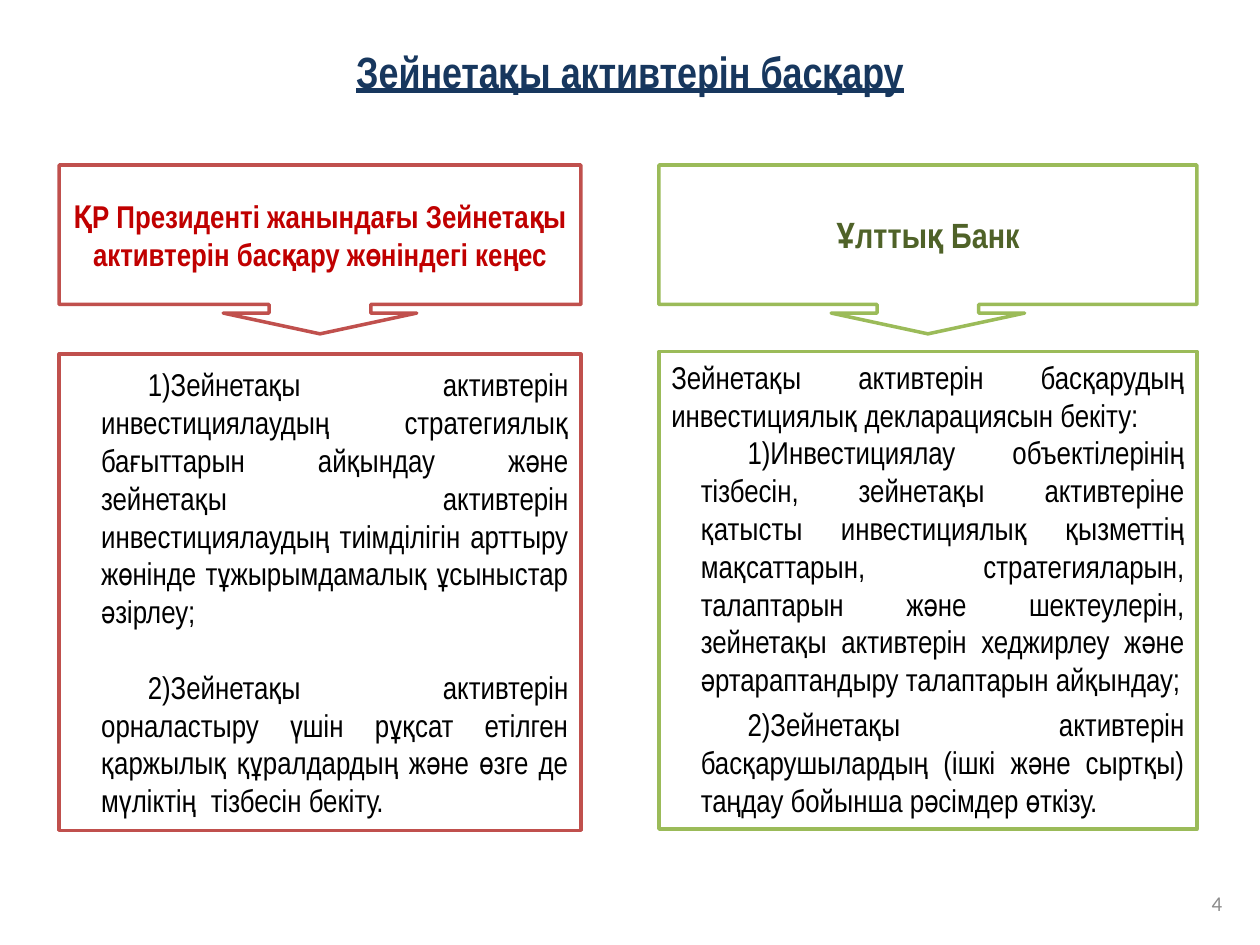
from dataclasses import dataclass

from lxml import etree
from pptx import Presentation
from pptx.dml.color import RGBColor
from pptx.enum.shapes import MSO_SHAPE
from pptx.enum.text import MSO_ANCHOR, MSO_AUTO_SIZE, PP_ALIGN
from pptx.oxml.ns import qn
from pptx.util import Inches, Pt

RECT, CALLOUT = MSO_SHAPE.RECTANGLE, MSO_SHAPE.DOWN_ARROW_CALLOUT
TOP, MIDDLE = MSO_ANCHOR.TOP, MSO_ANCHOR.MIDDLE
CENTER, RIGHT, JUSTIFY = PP_ALIGN.CENTER, PP_ALIGN.RIGHT, PP_ALIGN.JUSTIFY
NO_FIT, GROW = MSO_AUTO_SIZE.NONE, MSO_AUTO_SIZE.SHAPE_TO_FIT_TEXT

NAVY = RGBColor(0x17, 0x37, 0x5E)
RED = RGBColor(0xC0, 0x50, 0x4D)
DARK_RED = RGBColor(0xC0, 0x00, 0x00)
GREEN = RGBColor(0x9B, 0xBB, 0x59)
DARK_GREEN = RGBColor(0x4F, 0x62, 0x28)
GRAY = RGBColor(0x8C, 0x8C, 0x8C)
BLACK = RGBColor(0, 0, 0)
WHITE = RGBColor(0xFF, 0xFF, 0xFF)

FONT = "Arial Narrow"
ARROW = (0.602, 0.573, 0.123, 0.826)


@dataclass
class Item:
    text: str
    numbered: bool = True
    after: float = 0


@dataclass
class Column:
    left: float
    width: float
    line: RGBColor
    head: str
    head_size: int
    head_color: RGBColor
    top: float
    height: float
    anchor: MSO_ANCHOR
    fit: MSO_AUTO_SIZE
    items: list[Item]


COLUMNS = [
    Column(0.47, 4.14, RED,
           "ҚР Президенті жанындағы Зейнетақы активтерін басқару жөніндегі кеңес",
           18, DARK_RED, 2.81, 3.78, MIDDLE, NO_FIT, [
               Item("Зейнетақы активтерін инвестициялаудың стратегиялық бағыттарын "
                    "айқындау және зейнетақы активтерін инвестициялаудың тиімділігін "
                    "арттыру жөнінде тұжырымдамалық ұсыныстар әзірлеу;", after=21.6),
               Item("Зейнетақы активтерін орналастыру үшін рұқсат етілген қаржылық "
                    "құралдардың және өзге де мүліктің  тізбесін бекіту."),
           ]),
    Column(5.23, 4.27, GREEN, "Ұлттық Банк", 20, DARK_GREEN, 2.79, 3.79, TOP, GROW, [
        Item("Зейнетақы активтерін басқарудың инвестициялық декларациясын бекіту:",
             numbered=False),
        Item("Инвестициялау объектілерінің тізбесін, зейнетақы активтеріне қатысты "
             "инвестициялық қызметтің мақсаттарын, стратегияларын, талаптарын және "
             "шектеулерін, зейнетақы активтерін хеджирлеу және әртараптандыру "
             "талаптарын айқындау;", after=4),
        Item("Зейнетақы активтерін басқарушылардың (ішкі және сыртқы) таңдау бойынша "
             "рәсімдер өткізу."),
    ]),
]


def write(para, text: str, size: float, color: RGBColor, align: PP_ALIGN,
          bold: bool = False, name: str = FONT) -> None:
    para.text = text
    para.alignment = align
    font = para.runs[0].font
    font.name, font.size, font.bold = name, Pt(size), bold
    font.color.rgb = color


def number(para) -> None:
    """Number the paragraph 1), 2) with an indented first line."""
    props = para._p.get_or_add_pPr()
    props.set("marL", str(Inches(0.235)))
    props.set("indent", str(Inches(0.37)))
    etree.SubElement(props, qn("a:buFont"), typeface="+mj-lt")
    etree.SubElement(props, qn("a:buAutoNum"), type="arabicParenR")


def add_box(slide, kind: MSO_SHAPE, col: Column, top: float, height: float):
    box = slide.shapes.add_shape(kind, Inches(col.left), Inches(top),
                                 Inches(col.width), Inches(height))
    box.shadow.inherit = False
    box.fill.solid()
    box.fill.fore_color.rgb = WHITE
    box.line.color.rgb = col.line
    box.line.width = Pt(2)
    box.text_frame.word_wrap = True
    return box


def add_column(slide, col: Column) -> None:
    body = add_box(slide, RECT, col, col.top, col.height).text_frame
    body.vertical_anchor = col.anchor
    body.auto_size = col.fit
    for i, item in enumerate(col.items):
        para = body.add_paragraph() if i else body.paragraphs[0]
        write(para, item.text, 18, BLACK, JUSTIFY)
        para.space_after = Pt(item.after)
        if item.numbered:
            number(para)

    head = add_box(slide, CALLOUT, col, 1.31, 1.34)
    for i, value in enumerate(ARROW):
        head.adjustments[i] = value
    head.text_frame.vertical_anchor = MIDDLE
    write(head.text_frame.paragraphs[0], col.head, col.head_size,
          col.head_color, CENTER, bold=True)


def add_title(slide) -> None:
    title = slide.shapes.title
    title.left, title.top = Inches(0.5), Inches(0.21)
    title.width, title.height = Inches(9), Inches(0.7)
    frame = title.text_frame
    frame.vertical_anchor = MIDDLE
    frame.auto_size = NO_FIT
    para = frame.paragraphs[0]
    write(para, "Зейнетақы активтерін басқару", 25, NAVY, CENTER, bold=True)
    para.runs[0].font.underline = True


def add_page(slide) -> None:
    frame = slide.shapes.add_textbox(Inches(7.47), Inches(6.97),
                                     Inches(2.33), Inches(0.4)).text_frame
    frame.word_wrap = True
    frame.vertical_anchor = MIDDLE
    write(frame.paragraphs[0], "4", 12, GRAY, RIGHT, name="Calibri")


def main() -> None:
    deck = Presentation()
    deck.slide_width, deck.slide_height = Inches(10), Inches(7.5)
    slide = deck.slides.add_slide(deck.slide_layouts[5])
    add_title(slide)
    for col in COLUMNS:
        add_column(slide, col)
    add_page(slide)
    deck.save("out.pptx")


if __name__ == "__main__":
    main()
